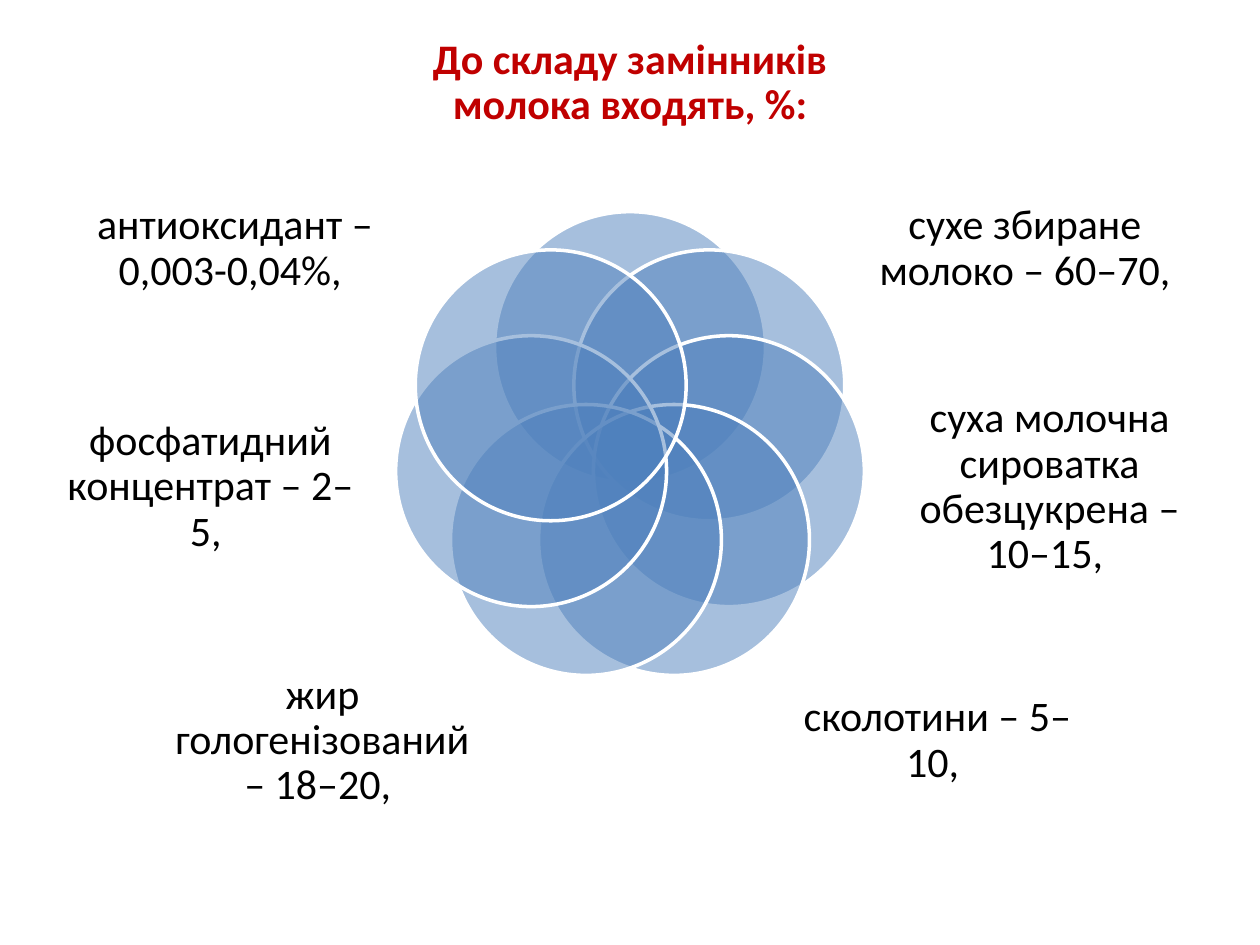
import dataclasses
import math

import lxml.etree
import pptx
import pptx.dml.color
import pptx.enum.shapes
import pptx.enum.text
import pptx.oxml.ns
import pptx.util


@dataclasses.dataclass(frozen=True)
class Theme:
    font: str = "Calibri"
    size: int = 24
    title: str = "C00000"
    text: str = "000000"
    petal: str = "4F81BD"
    petal_alpha: int = 50
    outline: str = "FFFFFF"
    outline_width: int = 2


def rgb(value):
    return pptx.dml.color.RGBColor.from_string(value)


class VennSlide:
    """Places elements on a grid of 100 columns by 75 rows."""

    COLS, ROWS = 100, 75

    def __init__(self, prs, theme):
        self.theme = theme
        self.cell_w = prs.slide_width / self.COLS
        self.cell_h = prs.slide_height / self.ROWS
        self.s = prs.slides.add_slide(prs.slide_layouts[6])

    def box(self, col, row, cols, rows):
        return (round(col * self.cell_w), round(row * self.cell_h),
                round(cols * self.cell_w), round(rows * self.cell_h))

    def petal(self, col, row, radius):
        """Translucent circle around a centre point."""
        t = self.theme
        sp = self.s.shapes.add_shape(
            pptx.enum.shapes.MSO_SHAPE.OVAL,
            *self.box(col - radius, row - radius, 2 * radius, 2 * radius))
        sp.shadow.inherit = False
        sp.fill.solid()
        sp.fill.fore_color.rgb = rgb(t.petal)
        color = sp.fill._xPr.find(".//" + pptx.oxml.ns.qn("a:srgbClr"))
        alpha = lxml.etree.SubElement(color, pptx.oxml.ns.qn("a:alpha"))
        alpha.set("val", str(t.petal_alpha * 1000))
        sp.line.color.rgb = rgb(t.outline)
        sp.line.width = pptx.util.Pt(t.outline_width)

    def label(self, text, area, color, bold=False):
        """Centred text in the middle of its area."""
        t = self.theme
        tf = self.s.shapes.add_textbox(*self.box(*area)).text_frame
        tf.word_wrap = True
        tf.vertical_anchor = pptx.enum.text.MSO_ANCHOR.MIDDLE
        tf.margin_left = tf.margin_right = tf.margin_top = tf.margin_bottom = 0
        p = tf.paragraphs[0]
        p.text = text
        p.alignment = pptx.enum.text.PP_ALIGN.CENTER
        p.line_spacing = 0.9
        p.font.name = t.font
        p.font.size = pptx.util.Pt(t.size)
        p.font.bold = bold
        p.font.color.rgb = rgb(color)


def mirrored(area):
    col, row, cols, rows = area
    return VennSlide.COLS - col - cols, row, cols, rows


TITLE_AREA = (31.9, 0, 36.2, 13.2)
RIGHT_AREAS = [(69.7, 12.5, 23.3, 14.5),
               (71.9, 30.9, 22.8, 15.5),
               (62.1, 51.7, 24.6, 14.2)]
AREAS = [TITLE_AREA] + RIGHT_AREAS + [mirrored(a) for a in reversed(RIGHT_AREAS)]

# Clockwise from the top
TEXTS = ["До складу замінників молока входять, %:",
         "сухе збиране молоко – 60–70, ",
         "суха молочна сироватка обезцукрена – 10–15, ",
         "сколотини – 5–10, ",
         "жир гологенізований – 18–20, ",
         "фосфатидний концентрат – 2–5, ",
         "антиоксидант – 0,003-0,04%, "]

CENTER_COL, CENTER_ROW = 50, 35.6
ORBIT, PETAL_RADIUS = 8.05, 10.75


def main():
    prs = pptx.Presentation()
    prs.slide_width = pptx.util.Inches(10)
    prs.slide_height = pptx.util.Inches(7.5)
    theme = Theme()
    venn = VennSlide(prs, theme)

    # Seven petals at equal angles, each with its label
    for i, (text, area) in enumerate(zip(TEXTS, AREAS)):
        angle = 2 * math.pi * i / len(TEXTS)
        venn.petal(CENTER_COL + ORBIT * math.sin(angle),
                   CENTER_ROW - ORBIT * math.cos(angle), PETAL_RADIUS)
        is_title = i == 0
        venn.label(text, area, theme.title if is_title else theme.text, is_title)

    prs.save("out.pptx")


if __name__ == "__main__":
    main()
